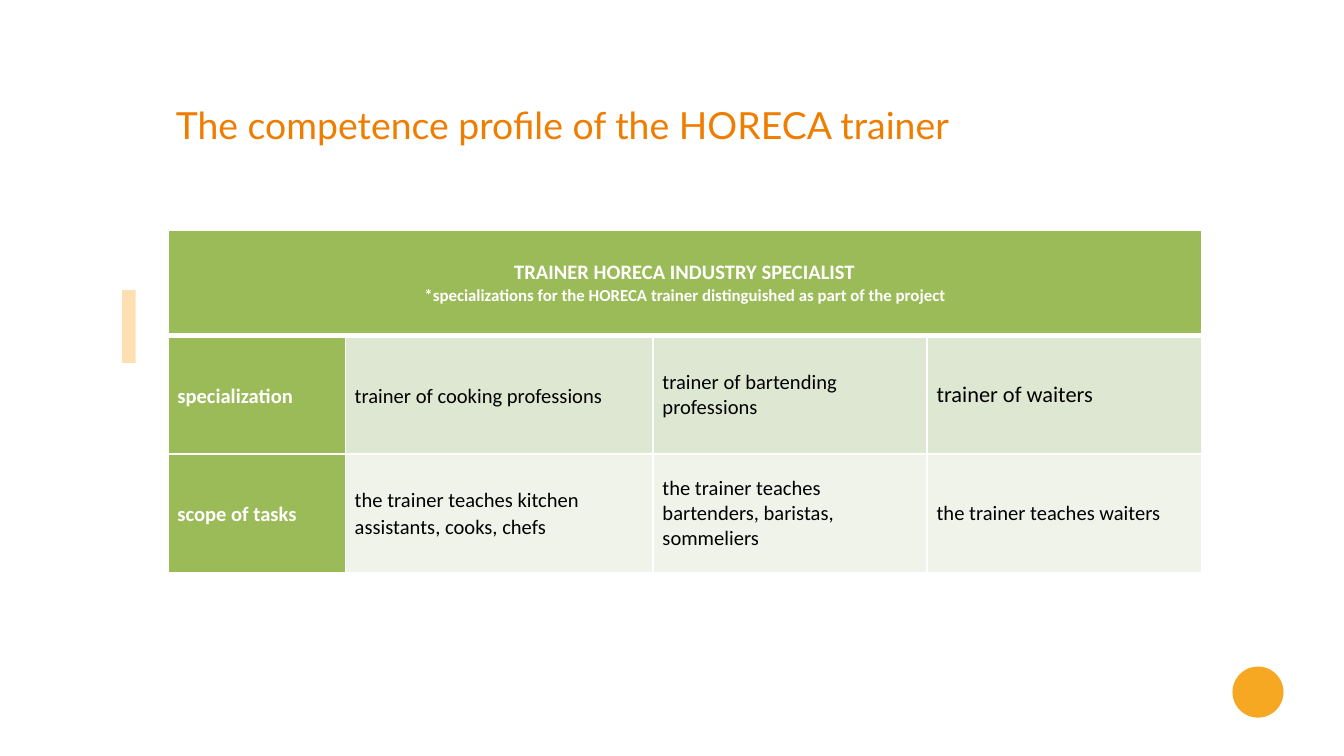
from lxml.etree import SubElement
from pptx import Presentation
from pptx.dml.color import RGBColor
from pptx.enum.shapes import MSO_SHAPE
from pptx.enum.text import MSO_ANCHOR, PP_ALIGN
from pptx.oxml.ns import qn
from pptx.util import Inches, Pt

WHITE = RGBColor(0xFF, 0xFF, 0xFF)
BLACK = RGBColor(0x00, 0x00, 0x00)
AMBER = RGBColor(0xF7, 0xA8, 0x23)
ORANGE = RGBColor(0xEF, 0x7D, 0x00)
GREEN = RGBColor(0x9B, 0xBB, 0x59)
BAND_DARK = RGBColor(0xDE, 0xE7, 0xD1)
BAND_LIGHT = RGBColor(0xEF, 0xF3, 0xEA)


def write(p, text, size=11, color=BLACK, bold=False, font="Calibri",
          align=PP_ALIGN.LEFT, spacing=None):
    p.alignment = align
    p.line_spacing = spacing
    r = p.add_run()
    r.text = text
    r.font.size = Pt(size)
    r.font.name = font
    r.font.bold = bold
    r.font.color.rgb = color


def style_cell(cell, fill, bottom=1):
    """Set white borders, fill, margins and anchor; bottom is a width in points."""
    tcPr = cell._tc.get_or_add_tcPr()
    for side, width in (("L", 1), ("R", 1), ("T", 1), ("B", bottom)):
        ln = SubElement(tcPr, qn(f"a:ln{side}"), w=str(Pt(width)))
        solid = SubElement(ln, qn("a:solidFill"))
        SubElement(solid, qn("a:srgbClr"), val=str(WHITE))
    cell.fill.solid()
    cell.fill.fore_color.rgb = fill
    cell.vertical_anchor = MSO_ANCHOR.MIDDLE
    cell.margin_left = cell.margin_right = Inches(0.07)
    cell.margin_top = cell.margin_bottom = 0


prs = Presentation()
prs.slide_width = Inches(10)
prs.slide_height = Inches(10 * 9 / 16)
s = prs.slides.add_slide(prs.slide_layouts[6])

# Accent bar and page dot
for kind, box in ((MSO_SHAPE.RECTANGLE, (0.91, 2.16, 0.1, 0.54)),
                  (MSO_SHAPE.OVAL, (9.17, 4.96, 0.38, 0.38))):
    sp = s.shapes.add_shape(kind, *map(Inches, box))
    sp.shadow.inherit = False
    sp.fill.solid()
    sp.fill.fore_color.rgb = AMBER
    sp.line.fill.background()
    if kind == MSO_SHAPE.RECTANGLE:
        color = sp.fill._xPr.find(qn("a:solidFill"))[0]
        SubElement(color, qn("a:alpha"), val="35000")

# Competence table
rows = [
    ("specialization", "trainer of cooking professions",
     "trainer of bartending professions", "trainer of waiters"),
    ("scope of tasks", "the trainer teaches kitchen assistants, cooks, chefs",
     "the trainer teaches bartenders, baristas, sommeliers",
     "the trainer teaches waiters"),
]
table = s.shapes.add_table(3, 4, Inches(1.25), Inches(1.71),
                           Inches(7.69), Inches(2.54)).table
for column, width in zip(table.columns, (1.32, 2.29, 2.04, 2.04)):
    column.width = Inches(width)
for row, height in zip(table.rows, (0.79, 0.88, 0.88)):
    row.height = Inches(height)

for cell in table.rows[0].cells:
    style_cell(cell, GREEN, bottom=3)
header = table.cell(0, 0)
header.merge(table.cell(0, 3))
tf = header.text_frame
heading = dict(color=WHITE, bold=True, align=PP_ALIGN.CENTER)
write(tf.paragraphs[0], "TRAINER HORECA INDUSTRY SPECIALIST", **heading)
write(tf.add_paragraph(),
      "*specializations for the HORECA trainer distinguished as part of the project",
      size=9, **heading)

for i, (texts, band) in enumerate(zip(rows, (BAND_DARK, BAND_LIGHT)), start=1):
    for j, text in enumerate(texts):
        cell = table.cell(i, j)
        is_label = j == 0
        style_cell(cell, GREEN if is_label else band)
        write(cell.text_frame.paragraphs[0], text,
              size=12 if text == "trainer of waiters" else 11,
              color=WHITE if is_label else BLACK, bold=is_label,
              spacing=1.07 if j < 2 else None)

# Title
title = s.shapes.add_textbox(Inches(1.21), Inches(0.71), Inches(7.96), Inches(0.44))
title.text_frame.word_wrap = True
write(title.text_frame.paragraphs[0], "The competence profile of the HORECA trainer",
      size=20, color=ORANGE, font="Lato")

prs.save("out.pptx")
